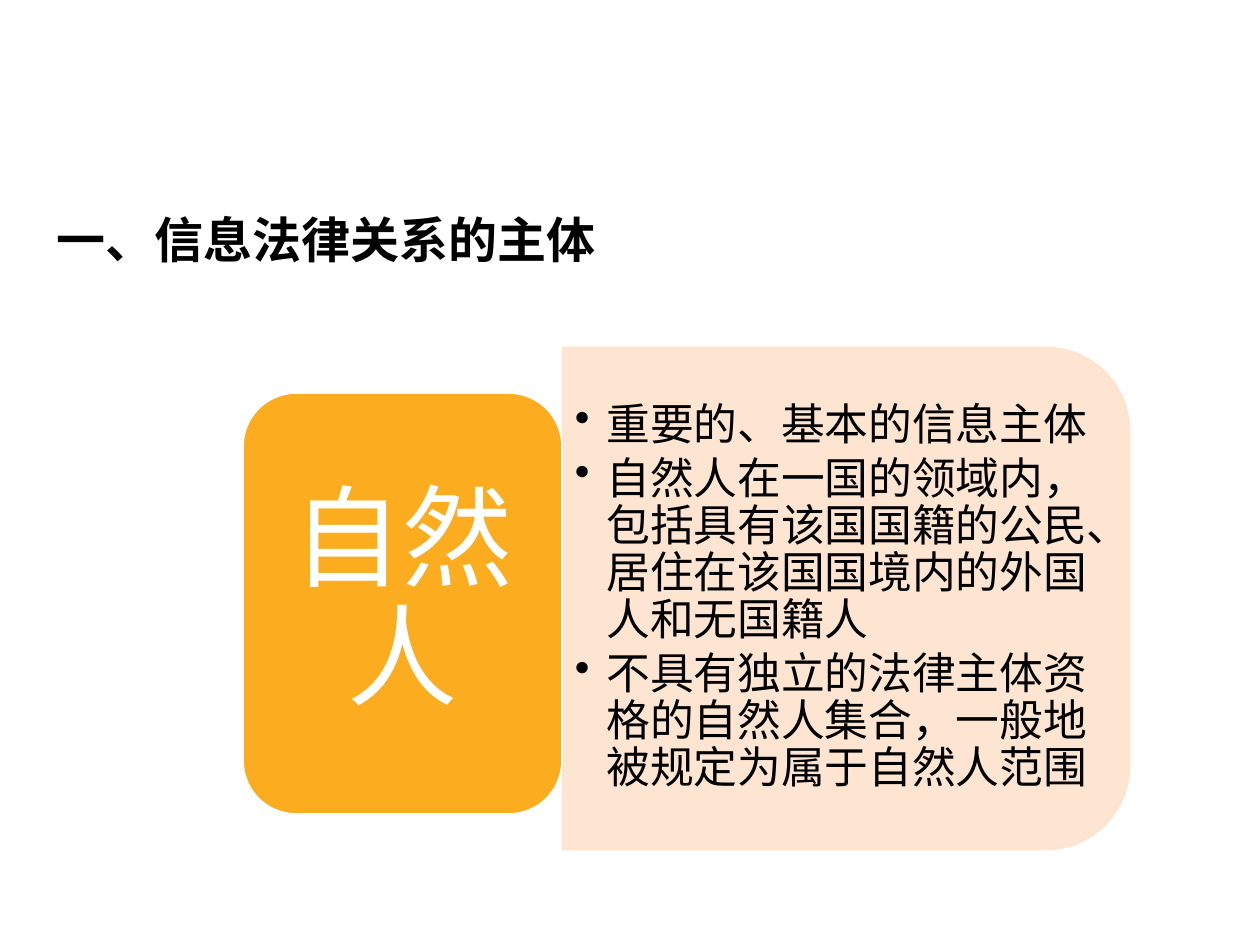
import pptx
import pptx.util
import pptx.dml.color
import pptx.enum.shapes
import pptx.enum.text
import pptx.oxml
import pptx.oxml.ns

PX = 914400 / 126
COLORS = {"ink": "000000", "white": "FFFFFF", "amber": "FCAC1F", "peach": "FEE3CD"}
ALIGN = pptx.enum.text.PP_ALIGN
ANCHOR = pptx.enum.text.MSO_ANCHOR
SHAPE = pptx.enum.shapes.MSO_SHAPE


def add_text(bounds, lines, font, size, color, bold=False, insets=(13, 6),
             anchor=ANCHOR.TOP, align=ALIGN.LEFT, spacing=1.0, after=0, bullet=False):
    box = page.shapes.add_textbox(*[round(v * PX) for v in bounds])
    frame = box.text_frame
    frame.word_wrap = True
    frame.vertical_anchor = anchor
    frame.margin_left = frame.margin_right = round(insets[0] * PX)
    frame.margin_top = frame.margin_bottom = round(insets[1] * PX)
    for index, line in enumerate(lines):
        para = frame.add_paragraph() if index else frame.paragraphs[0]
        para.alignment = align
        para.line_spacing = spacing
        para.space_after = pptx.util.Pt(after)
        if bullet:
            para.level = 1
            props = para._p.get_or_add_pPr()
            props.set("marL", "228600")
            props.set("indent", "-228600")
            mark = pptx.oxml.parse_xml(
                f'<a:buChar {pptx.oxml.ns.nsdecls("a")} char="•"/>')
            props.append(mark)
        span = para.add_run()
        span.text = line
        span.font.name = font
        span.font.size = pptx.util.Pt(size)
        span.font.bold = bold
        span.font.color.rgb = pptx.dml.color.RGBColor.from_string(COLORS[color])


def add_panel(kind, bounds, fill, line, opacity=100):
    panel = page.shapes.add_shape(kind, *[round(v * PX) for v in bounds])
    panel.shadow.inherit = False
    panel.fill.solid()
    panel.fill.fore_color.rgb = pptx.dml.color.RGBColor.from_string(COLORS[fill])
    panel.line.color.rgb = pptx.dml.color.RGBColor.from_string(COLORS[line])
    panel.line.width = pptx.util.Pt(1)
    if opacity < 100:
        for color in panel._element.spPr.iter(pptx.oxml.ns.qn("a:srgbClr")):
            color.append(pptx.oxml.parse_xml(
                f'<a:alpha {pptx.oxml.ns.nsdecls("a")} val="{opacity * 1000}"/>'))
    return panel


deck = pptx.Presentation()
deck.slide_width = pptx.util.Inches(10)
deck.slide_height = pptx.util.Inches(7.5)
page = deck.slides.add_slide(deck.slide_layouts[6])

add_text((44, 204, 893, 174), ["一、信息法律关系的主体"],
         "DejaVu Sans", 28, "ink", bold=True)

detail = add_panel(SHAPE.ROUND_2_SAME_RECTANGLE, (595, 315, 502, 567),
                   "peach", "peach", opacity=90)
detail.rotation = 90
add_text((562, 372, 543, 452),
         ["重要的、基本的信息主体",
          "自然人在一国的领域内，包括具有该国国籍的公民、居住在该国国境内的外国人和无国籍人",
          "不具有独立的法律主体资格的自然人集合，一般地被规定为属于自然人范围"],
         "Arial", 25, "ink", anchor=ANCHOR.MIDDLE, spacing=0.9, after=3.75, bullet=True)

add_panel(SHAPE.ROUNDED_RECTANGLE, (243, 393, 319, 421), "amber", "white")
add_text((258, 408, 289, 389), ["自然人"], "Arial", 63, "white", insets=(33, 16),
         anchor=ANCHOR.MIDDLE, align=ALIGN.CENTER, spacing=0.9, after=22)

deck.save("out.pptx")
